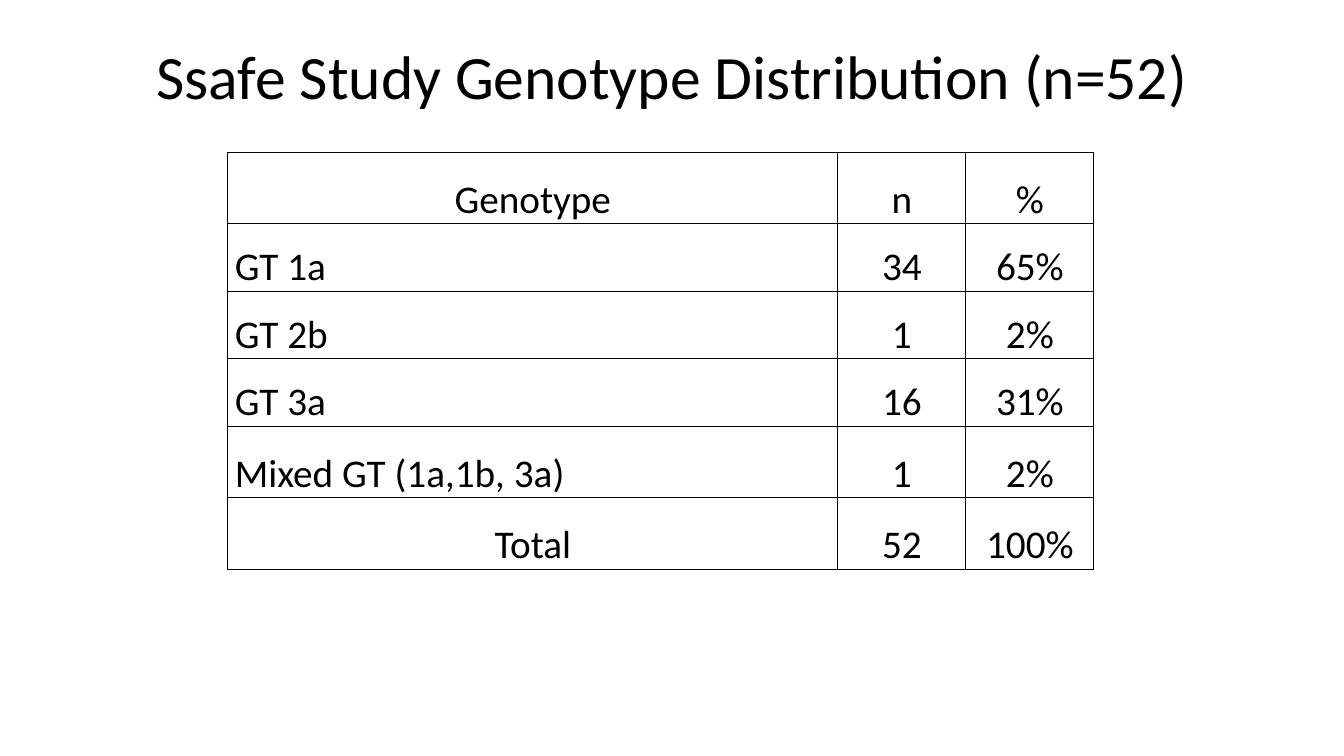
from dataclasses import dataclass

from lxml import etree
from pptx import Presentation
from pptx import util as u
from pptx.dml.color import RGBColor
from pptx.enum import text
from pptx.oxml import ns

BLACK = RGBColor(0x00, 0x00, 0x00)
WHITE = RGBColor(0xFF, 0xFF, 0xFF)
FONT = "Calibri"
WIDTH, HEIGHT = u.Inches(13.33), u.Inches(7.5)
COLUMNS = [6.05, 1.27, 1.27]
TALL, SHORT = 0.71, 0.67


@dataclass
class GenotypeRow:
    label: str
    count: str
    share: str
    height: float = SHORT
    label_align: text.PP_ALIGN = text.PP_ALIGN.LEFT


CENTER = text.PP_ALIGN.CENTER
ROWS = [
    GenotypeRow("Genotype", "n", "%", TALL, CENTER),
    GenotypeRow("GT 1a", "34", "65%"),
    GenotypeRow("GT 2b", "1", "2%"),
    GenotypeRow("GT 3a", "16", "31%"),
    GenotypeRow("Mixed GT (1a,1b, 3a)", "1", "2%", TALL),
    GenotypeRow("Total", "52", "100%", TALL, CENTER),
]


def format_paragraph(p, size: float, align: text.PP_ALIGN) -> None:
    p.alignment = align
    for r in p.runs:
        r.font.name = FONT
        r.font.size = u.Pt(size)
        r.font.color.rgb = BLACK


def add_borders(cell) -> None:
    props = cell._tc.get_or_add_tcPr()
    for side in ("lnL", "lnR", "lnT", "lnB"):
        line = etree.SubElement(props, ns.qn(f"a:{side}"), w=str(u.Pt(1)))
        fill = etree.SubElement(line, ns.qn("a:solidFill"))
        etree.SubElement(fill, ns.qn("a:srgbClr"), val=str(BLACK))


def fill_cell(cell, value: str, align: text.PP_ALIGN) -> None:
    cell.text_frame.text = value
    cell.vertical_anchor = text.MSO_ANCHOR.BOTTOM
    cell.margin_left = cell.margin_right = u.Inches(0.07)
    cell.margin_top = cell.margin_bottom = 0
    add_borders(cell)
    cell.fill.solid()
    cell.fill.fore_color.rgb = WHITE
    format_paragraph(cell.text_frame.paragraphs[0], 28, align)


def add_title(slide, title: str) -> None:
    sp = slide.shapes.title
    sp.left, sp.top = u.Inches(0.92), u.Inches(0.24)
    sp.width, sp.height = u.Inches(11.5), u.Inches(1.09)
    tf = sp.text_frame
    tf.text = title
    tf.word_wrap = True
    tf.vertical_anchor = text.MSO_ANCHOR.MIDDLE
    p = tf.paragraphs[0]
    p.line_spacing = 0.9
    format_paragraph(p, 44, CENTER)


def add_genotype_table(slide, rows: list[GenotypeRow]) -> None:
    table = slide.shapes.add_table(
        len(rows), len(COLUMNS), u.Inches(2.26), u.Inches(1.51),
        u.Inches(sum(COLUMNS)), u.Inches(sum(row.height for row in rows)),
    ).table
    table.first_row = table.horz_banding = False
    for column, width in zip(table.columns, COLUMNS):
        column.width = u.Inches(width)
    for i, row in enumerate(rows):
        table.rows[i].height = u.Inches(row.height)
        fill_cell(table.cell(i, 0), row.label, row.label_align)
        fill_cell(table.cell(i, 1), row.count, CENTER)
        fill_cell(table.cell(i, 2), row.share, CENTER)


def main() -> None:
    prs = Presentation()
    prs.slide_width, prs.slide_height = WIDTH, HEIGHT
    slide = prs.slides.add_slide(prs.slide_layouts[5])
    add_title(slide, "Ssafe Study Genotype Distribution (n=52)")
    add_genotype_table(slide, ROWS)
    prs.save("out.pptx")


if __name__ == "__main__":
    main()
